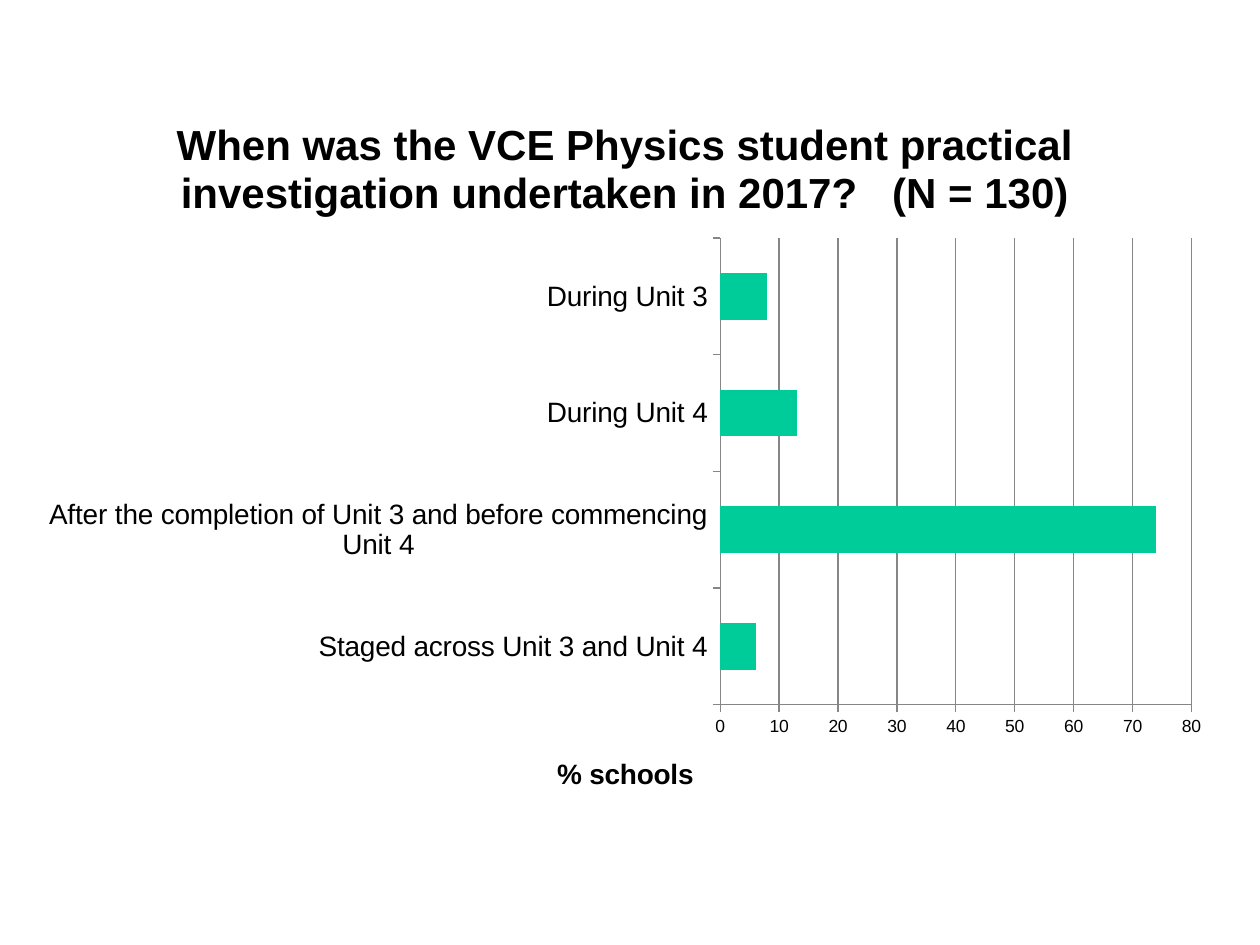
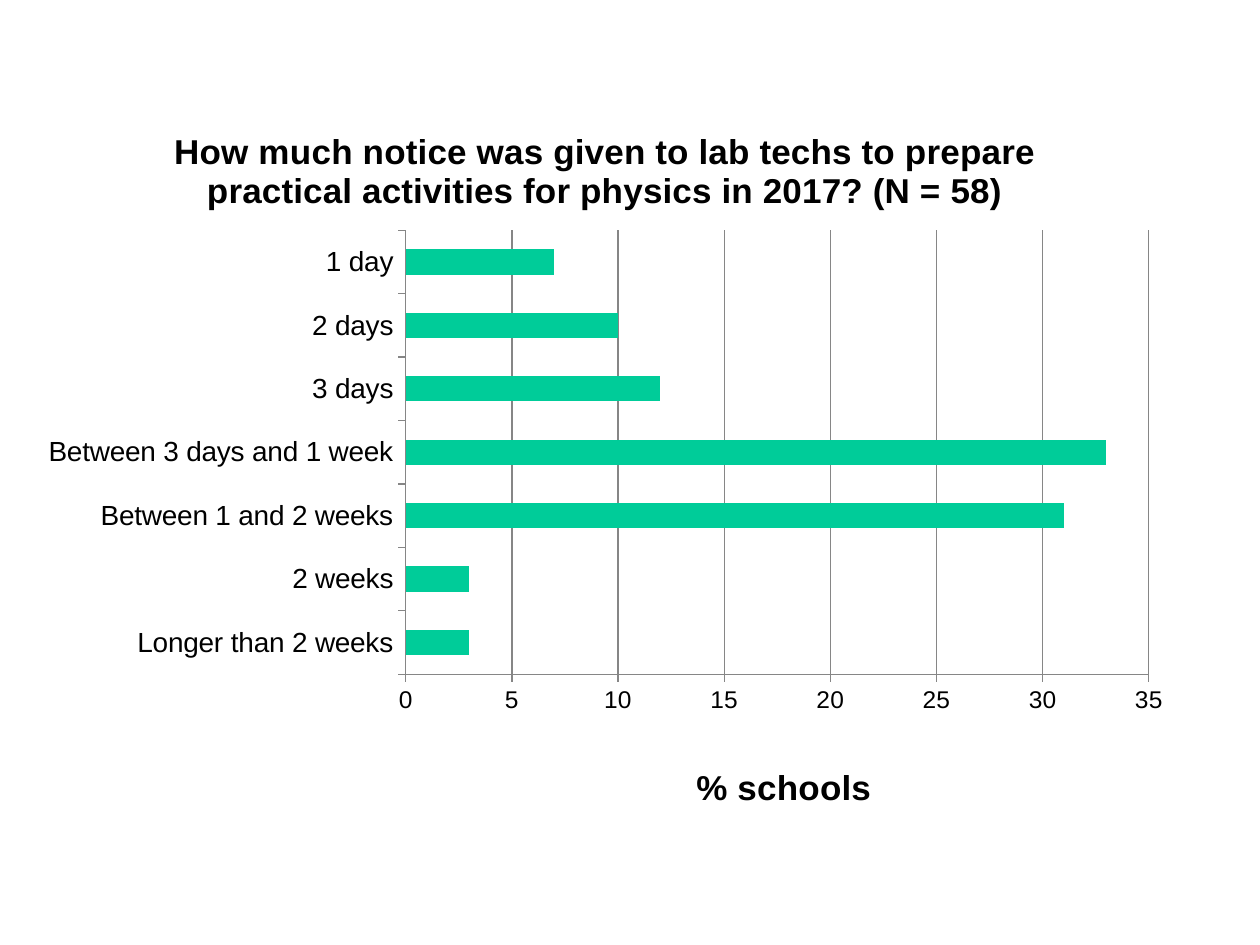
from dataclasses import dataclass

from lxml.etree import SubElement
from pptx import Presentation
from pptx.chart.data import CategoryChartData
from pptx.dml.color import RGBColor
from pptx.enum.chart import XL_CHART_TYPE as ChartType, XL_TICK_MARK as TickMark
from pptx.oxml.ns import qn
from pptx.util import Cm, Pt

FONT = "Arial"
TEXT = "000000"
BAR = "00CC99"
GRID = "868686"
CATEGORY_SIZE = 16


@dataclass(frozen=True)
class Frame:
    left: float
    top: float
    width: float = 0
    height: float = 0


@dataclass(frozen=True)
class Heading:
    text: str
    size: int
    place: Frame


@dataclass(frozen=True)
class Survey:
    question: Heading
    unit: Heading
    frame: Frame
    plot: Frame
    answers: dict[str, int]
    maximum: int
    step: int
    scale_size: int


SURVEYS = [
    Survey(
        Heading("When was the VCE Physics student practical investigation "
                "undertaken in 2017?   (N = 130)", 24, Frame(3.41, 2.22)),
        Heading("% schools", 16, Frame(11.13, 15.14)),
        Frame(0.51, 1.93, 24.21, 14.58),
        Frame(14.52, 4.8, 9.5, 9.41),
        {
            "Staged across Unit 3 and Unit 4": 6,
            "After the completion of Unit 3 and before commencing Unit 4": 74,
            "During Unit 4": 13,
            "During Unit 3": 8,
        },
        maximum=80, step=10, scale_size=10,
    ),
    Survey(
        Heading("How much notice was given to lab techs to prepare practical "
                "activities for physics in 2017? (N = 58)", 20, Frame(3.38, 2.48)),
        Heading("% schools", 20, Frame(13.91, 15.5)),
        Frame(0.51, 2.13, 23.39, 14.38),
        Frame(8.18, 4.68, 14.98, 9.08),
        {
            "Longer than 2 weeks": 3,
            "2 weeks": 3,
            "Between 1 and 2 weeks": 31,
            "Between 3 days and 1 week": 33,
            "3 days": 12,
            "2 days": 10,
            "1 day": 7,
        },
        maximum=35, step=5, scale_size=14,
    ),
]


def color(value: str) -> RGBColor:
    return RGBColor.from_string(value)


def style_font(font, size: int, bold: bool = False) -> None:
    for name, value in {"name": FONT, "size": Pt(size), "bold": bold}.items():
        setattr(font, name, value)
    font.color.rgb = color(TEXT)


def style_line(line) -> None:
    line.color.rgb = color(GRID)
    line.width = Pt(0.75)


def place_part(part, place: Frame, frame: Frame) -> None:
    for old in part.findall(qn("c:layout")):
        part.remove(old)
    layout = SubElement(part, qn("c:layout"))
    text = part.find(qn("c:tx"))
    part.insert(0 if text is None else 1, layout)
    manual = SubElement(layout, qn("c:manualLayout"))
    settings = {"xMode": "edge", "yMode": "edge",
                "x": (place.left - frame.left) / frame.width,
                "y": (place.top - frame.top) / frame.height}
    if place.width:
        settings = {"layoutTarget": "inner", **settings,
                    "w": place.width / frame.width,
                    "h": place.height / frame.height}
    for name, value in settings.items():
        SubElement(manual, qn(f"c:{name}")).set("val", str(value))


def write_heading(title, heading: Heading, frame: Frame) -> None:
    para = title.text_frame.paragraphs[0]
    span = para.add_run()
    span.text = heading.text
    style_font(para.font, heading.size, bold=True)
    style_font(span.font, heading.size, bold=True)
    place_part(title._element, heading.place, frame)


def style_axis(axis, size: int) -> None:
    axis.major_tick_mark = TickMark.OUTSIDE
    axis.minor_tick_mark = TickMark.NONE
    style_font(axis.tick_labels.font, size)
    style_line(axis.format.line)


def draw_survey(page, survey: Survey) -> None:
    data = CategoryChartData()
    data.categories = survey.answers.keys()
    data.add_series("Series 1", survey.answers.values())
    frame = survey.frame
    chart = page.shapes.add_chart(
        ChartType.BAR_CLUSTERED, Cm(frame.left), Cm(frame.top),
        Cm(frame.width), Cm(frame.height), data).chart
    chart.has_legend = False
    style_font(chart.font, 10)
    write_heading(chart.chart_title, survey.question, frame)

    bars = chart.plots[0]
    bars.gap_width = 150
    bars.vary_by_categories = False
    fill = bars.series[0].format.fill
    fill.solid()
    fill.fore_color.rgb = color(BAR)

    style_axis(chart.category_axis, CATEGORY_SIZE)
    scale = chart.value_axis
    style_axis(scale, survey.scale_size)
    for name, value in {"minimum_scale": 0, "maximum_scale": survey.maximum,
                        "major_unit": survey.step,
                        "has_major_gridlines": True}.items():
        setattr(scale, name, value)
    style_line(scale.major_gridlines.format.line)
    write_heading(scale.axis_title, survey.unit, frame)
    place_part(chart._chartSpace.chart.plotArea, survey.plot, frame)


def main() -> None:
    deck = Presentation()
    deck.slide_width, deck.slide_height = Cm(25.4), Cm(19.05)
    for survey in SURVEYS:
        draw_survey(deck.slides.add_slide(deck.slide_layouts[6]), survey)
    deck.save("out.pptx")


if __name__ == "__main__":
    main()
